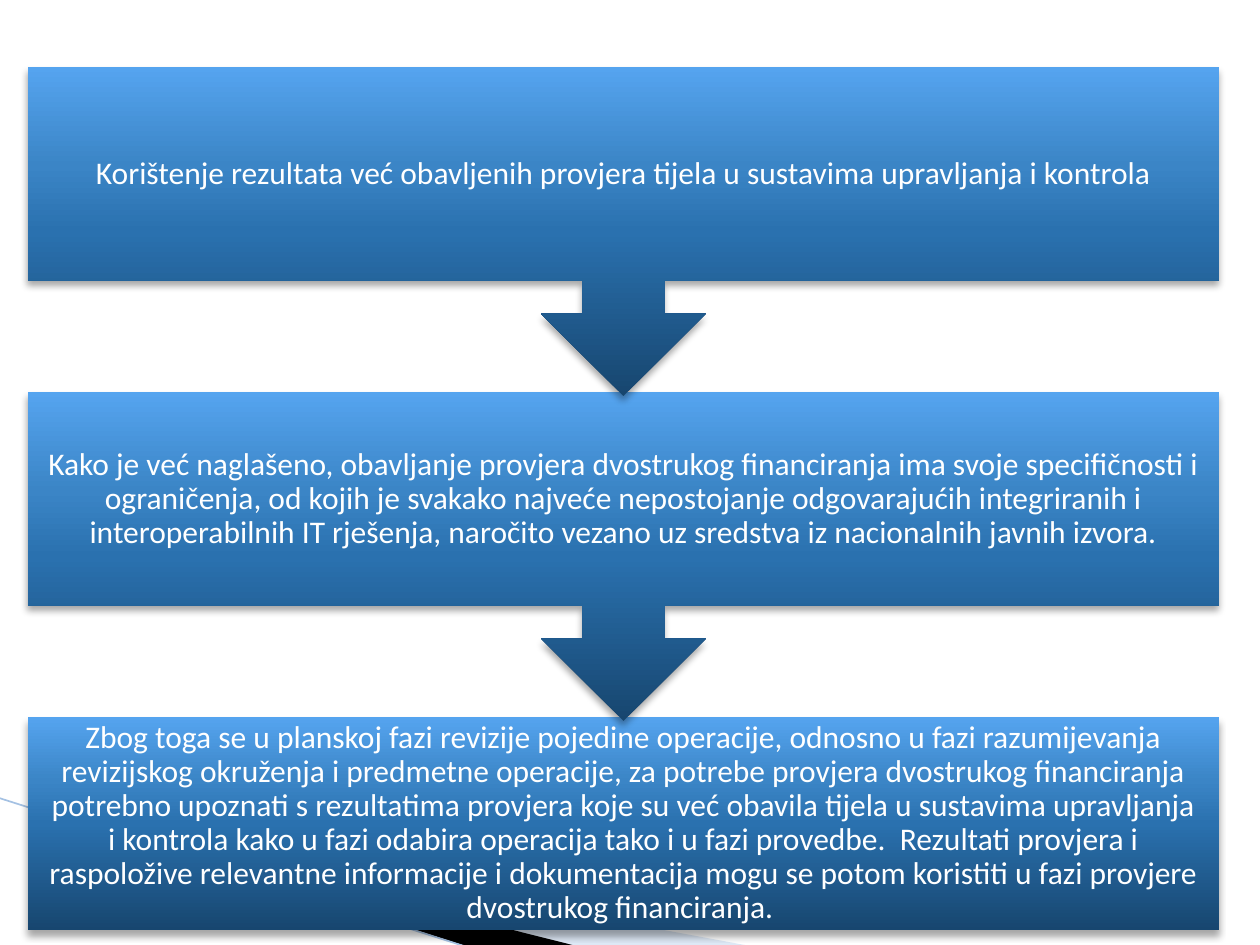
from copy import deepcopy
from lxml.etree import SubElement as sub
from pptx import Presentation
from pptx.dml.color import RGBColor as RGB
from pptx.enum.shapes import MSO_CONNECTOR as LINK, MSO_SHAPE as KIND
from pptx.enum.text import MSO_ANCHOR as ANCHOR, PP_ALIGN as ALIGN
from pptx.oxml.ns import qn
from pptx.util import Pt

SCALE = 914400 / 126
WIDE, HIGH = 1260, 945
LEFT, TOP, STEP = 28, 67, 325
BOX_W, BOX_H, CALL_H = 1191, 213, 329
PAD = 18

COLORS = {
    "pale": "ABC6E6",
    "black": "000000",
    "line": "A4C1E3",
    "white": "FFFFFF",
}
BLEND = [(0, "17466F"), (0.5, "2A71AF"), (0.7, "3B85C6"), (1, "55A4EF")]

STEPS = [
    "Korištenje rezultata već obavljenih provjera tijela u sustavima "
    "upravljanja i kontrola",
    "Kako je već naglašeno, obavljanje provjera dvostrukog financiranja ima "
    "svoje specifičnosti i ograničenja, od kojih je svakako najveće "
    "nepostojanje odgovarajućih integriranih i interoperabilnih IT rješenja, "
    "naročito vezano uz sredstva iz nacionalnih javnih izvora.",
    "Zbog toga se u planskoj fazi revizije pojedine operacije, odnosno u fazi "
    "razumijevanja revizijskog okruženja i predmetne operacije, za potrebe "
    "provjera dvostrukog financiranja potrebno upoznati s rezultatima "
    "provjera koje su već obavila tijela u sustavima upravljanja i kontrola "
    "kako u fazi odabira operacija tako i u fazi provedbe.  Rezultati "
    "provjera i raspoložive relevantne informacije i dokumentacija mogu se "
    "potom koristiti u fazi provjere dvostrukog financiranja. ",
]


def px(n):
    return int(n * SCALE)


def rgb(name):
    return RGB.from_string(COLORS[name])


def fade(color, share):
    sub(color, qn("a:alpha"), val=str(share * 1000))


def add_wedge(slide, points, name, share=100):
    pen = slide.shapes.build_freeform(*points[0], scale=SCALE)
    pen.add_line_segments(points[1:], close=True)
    wedge = pen.convert_to_shape()
    wedge.shadow.inherit = False
    wedge.line.fill.background()
    wedge.fill.solid()
    wedge.fill.fore_color.rgb = rgb(name)
    if share < 100:
        fade(wedge._element.spPr.find(".//" + qn("a:srgbClr")), share)


def add_line(slide, start, end):
    line = slide.shapes.add_connector(
        LINK.STRAIGHT, *map(px, start), *map(px, end))
    line.line.color.rgb = rgb("line")
    line.line.width = Pt(0.95)
    sub(line._element.spPr, qn("a:effectLst"))


def set_blend(shape):
    shape.fill.gradient()
    shape.fill.gradient_angle = 90
    stops = shape._element.spPr.find(".//" + qn("a:gsLst"))
    while len(stops) < len(BLEND):
        stops.append(deepcopy(stops[0]))
    for stop, (place, color) in zip(shape.fill.gradient_stops, BLEND):
        stop.position = place
        stop.color.rgb = RGB.from_string(color)


def set_shadow(shape):
    shape.shadow.inherit = False
    effects = shape._element.spPr.find(qn("a:effectLst"))
    shade = sub(effects, qn("a:outerShdw"), blurRad=str(Pt(4)),
                dist=str(Pt(3)), dir="5400000", rotWithShape="0")
    fade(sub(shade, qn("a:srgbClr"), val=COLORS["black"]), 35)


def set_text(shape, text):
    frame = shape.text_frame
    frame.text = text
    frame.word_wrap = True
    frame.vertical_anchor = ANCHOR.MIDDLE
    frame.margin_left = frame.margin_right = px(PAD)
    frame.margin_top = frame.margin_bottom = px(PAD)
    para = frame.paragraphs[0]
    para.alignment = ALIGN.CENTER
    para.line_spacing = 0.9
    font = para.runs[0].font
    font.name = "Calibri"
    font.size = Pt(18)
    font.color.rgb = rgb("white")


def add_step(slide, index, text):
    last = index == len(STEPS) - 1
    kind = KIND.RECTANGLE if last else KIND.DOWN_ARROW_CALLOUT
    high = BOX_H if last else CALL_H
    shape = slide.shapes.add_shape(
        kind, px(LEFT), px(TOP + index * STEP), px(BOX_W), px(high))
    shape.line.fill.background()
    set_blend(shape)
    set_shadow(shape)
    set_text(shape, text)


def main():
    deck = Presentation()
    deck.slide_width, deck.slide_height = px(WIDE), px(HIGH)
    slide = deck.slides.add_slide(deck.slide_layouts[6])
    add_wedge(slide, [(69, 820), (750, 946), (575, 946), (69, 819)],
              "pale", 40)
    add_wedge(slide, [(67, 818), (576, 946), (469, 947), (68, 819)], "black")
    add_line(slide, (-1, 798), (467, 947))
    for index, text in reversed(list(enumerate(STEPS))):
        add_step(slide, index, text)
    deck.save("out.pptx")


if __name__ == "__main__":
    main()
